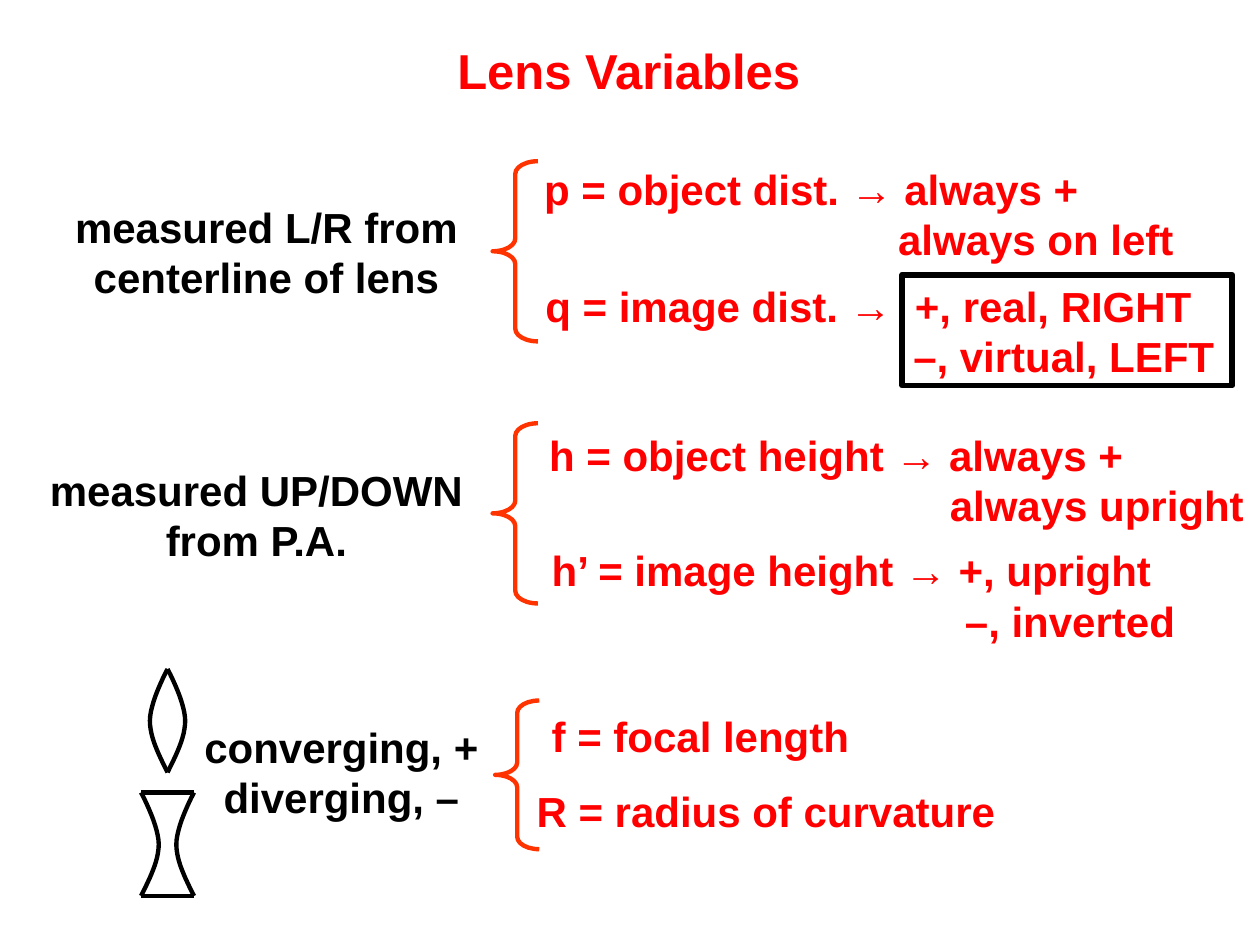
from pptx import Presentation
from pptx.dml.color import RGBColor
from pptx.enum.shapes import MSO_CONNECTOR as Connector, MSO_SHAPE as Shape
from pptx.enum.text import MSO_ANCHOR as Anchor, MSO_AUTO_SIZE as AutoSize, PP_ALIGN as Align
from pptx.oxml.ns import qn
from pptx.util import Inches, Pt
from lxml import etree

RED = RGBColor(0xFF, 0x00, 0x00)
ORANGE = RGBColor(0xFF, 0x33, 0x00)
BLACK = RGBColor(0x00, 0x00, 0x00)

TITLE = ("Lens Variables", (3.53, 0.27, 2.96, 0.57))
DEFINITIONS = [
    (["p = object dist. → always +", "always on left"], (4.22, 1.24, 5.46, 0.91), 2.81),
    (["q = image dist. →  +, real, RIGHT", "–, virtual, LEFT"], (4.23, 2.17, 5.56, 0.91), 2.92),
    (["h = object height → always +", "always upright"], (4.26, 3.35, 5.78, 0.91), 3.18),
    (["h’ = image height → +, upright", "–, inverted"], (4.28, 4.27, 5.19, 0.91), 3.28),
    (["f = focal length"], (4.28, 5.58, 2.58, 0.51), 0),
    (["R = radius of curvature"], (4.16, 6.18, 3.88, 0.51), 0),
]
GROUP_LABELS = [
    (["measured L/R from", "centerline of lens"], (0.48, 1.54, 3.27, 0.91)),
    (["measured UP/DOWN", "from P.A."], (0.28, 3.63, 3.51, 0.91)),
    (["converging, +", "diverging, –"], (1.51, 5.67, 2.4, 0.91)),
]
BRACES = [(3.91, 1.28, 0.36, 1.43), (3.91, 3.36, 0.36, 1.43), (3.93, 5.56, 0.35, 1.18)]
IMAGE_SIGN_BOX = (7.16, 2.18, 2.62, 0.88)
LENS_CENTER, LENS_HEIGHT = 1.33, 0.82
LENSES = [
    {"top": 5.31, "end": 0, "middle": 0.14},
    {"top": 6.29, "end": 0.21, "middle": 0.07},
]
CURVE_STEPS = 12


def format_line(shape, color, width):
    shape.line.color.rgb = color
    shape.line.width = Pt(width)


def write_text(shape, lines, color, size=24, alignment=Align.LEFT, indent=0):
    frame = shape.text_frame
    frame_format = {
        "word_wrap": indent > 0,
        "auto_size": AutoSize.NONE,
        "vertical_anchor": Anchor.MIDDLE,
        "margin_left": Inches(0.1),
        "margin_right": Inches(0.1),
        "margin_top": Inches(0.05),
        "margin_bottom": Inches(0.05),
    }
    for name, value in frame_format.items():
        setattr(frame, name, value)
    font_format = {"name": "Arial", "size": Pt(size), "bold": True}
    for number, line in enumerate(lines):
        paragraph = frame.add_paragraph() if number else frame.paragraphs[0]
        paragraph.alignment = alignment
        if number and indent:
            paragraph._p.get_or_add_pPr().set("marL", str(Inches(indent)))
        run = paragraph.add_run()
        run.text = line
        for name, value in font_format.items():
            setattr(run.font, name, value)
        run.font.color.rgb = color


def add_text(slide, lines, place, color, **options):
    write_text(slide.shapes.add_textbox(*map(Inches, place)), lines, color, **options)


def add_outline(slide, kind, place, color, width):
    shape = slide.shapes.add_shape(kind, *map(Inches, place))
    shape.shadow.inherit = False
    shape.fill.background()
    format_line(shape, color, width)
    return shape


def curve_points(a, b, c, d):
    for step in range(1, CURVE_STEPS + 1):
        t = step / CURVE_STEPS
        weights = ((1 - t) ** 3, 3 * t * (1 - t) ** 2, 3 * t * t * (1 - t), t ** 3)
        yield tuple(
            Inches(sum(w * p for w, p in zip(weights, axis))) for axis in zip(a, b, c, d)
        )


def add_lens_side(slide, side, top, end, middle):
    shares = [(0, 1), (0.5, 0.83), (1, 0.66), (1, 0.5), (1, 0.34), (0.25, 0.08), (0, 0)]
    knots = [
        (LENS_CENTER + side * (end + share * (middle - end)), top + depth * LENS_HEIGHT)
        for share, depth in shares
    ]
    builder = slide.shapes.build_freeform(*map(Inches, knots[0]))
    points = [*curve_points(*knots[:4]), *curve_points(*knots[3:])]
    builder.add_line_segments(points, close=False)
    shape = builder.convert_to_shape()
    shape.shadow.inherit = False
    shape.fill.background()
    format_line(shape, BLACK, 2.5)


def add_lens(slide, top, end, middle):
    for side in (-1, 1):
        add_lens_side(slide, side, top, end, middle)
    if end:
        for y in (top, top + LENS_HEIGHT):
            edge = slide.shapes.add_connector(
                Connector.STRAIGHT,
                *map(Inches, (LENS_CENTER - end, y, LENS_CENTER + end, y)),
            )
            format_line(edge, BLACK, 2.5)
            etree.SubElement(edge._element.spPr, qn("a:effectLst"))


def main():
    presentation = Presentation()
    presentation.slide_width, presentation.slide_height = Inches(10), Inches(7.5)
    slide = presentation.slides.add_slide(presentation.slide_layouts[5])

    title = slide.shapes.title
    text, place = TITLE
    for name, value in zip(("left", "top", "width", "height"), place):
        setattr(title, name, Inches(value))
    write_text(title, [text], RED, size=28)

    for lines, place, indent in DEFINITIONS:
        add_text(slide, lines, place, RED, indent=indent)
    for lines, place in GROUP_LABELS:
        add_text(slide, lines, place, BLACK, alignment=Align.CENTER)
    for place in BRACES:
        brace = add_outline(slide, Shape.LEFT_BRACE, place, ORANGE, 2.5)
        brace.adjustments[0] = 0.28
    for lens in LENSES:
        add_lens(slide, **lens)
    add_outline(slide, Shape.RECTANGLE, IMAGE_SIGN_BOX, BLACK, 3.25)

    presentation.save("out.pptx")


if __name__ == "__main__":
    main()
